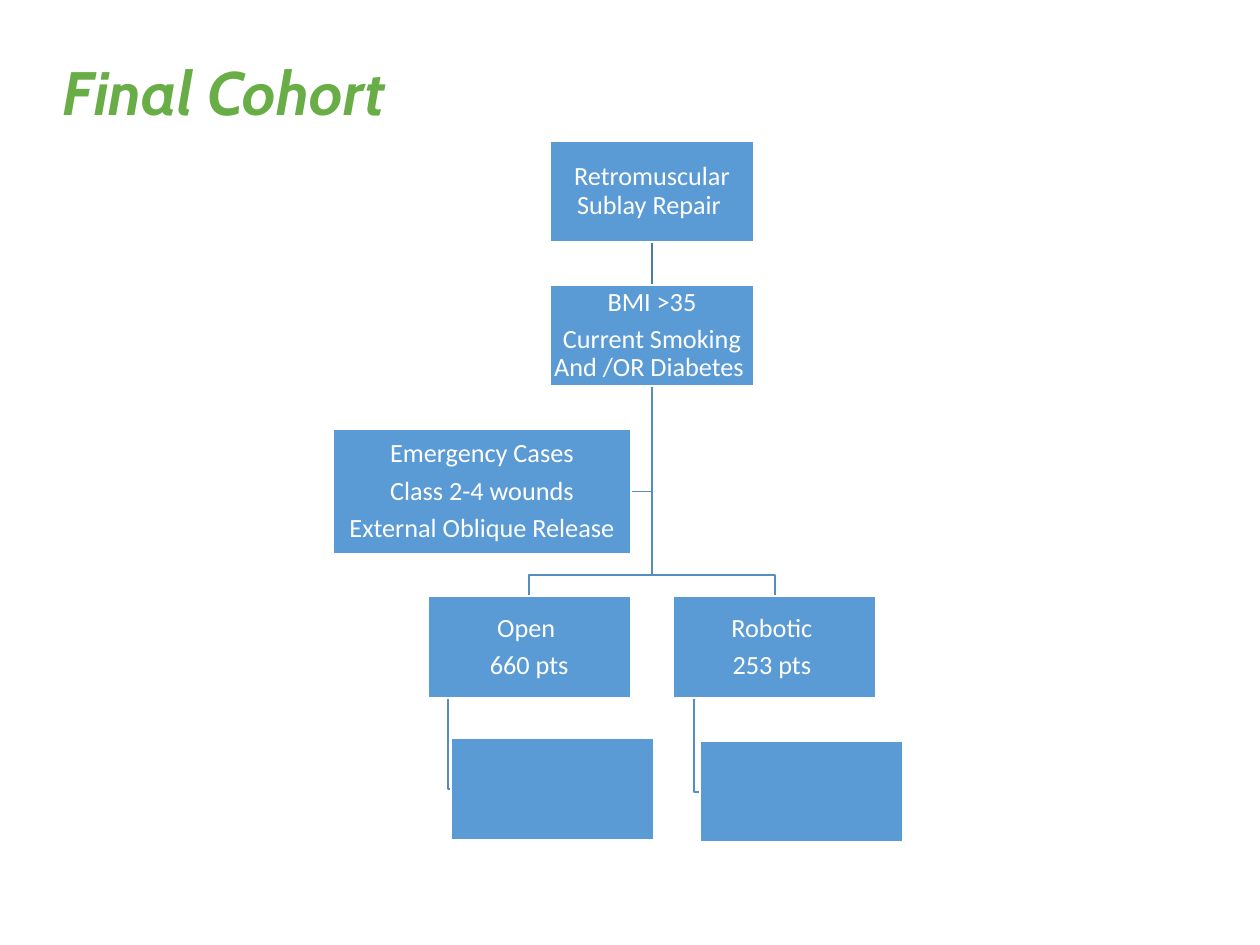
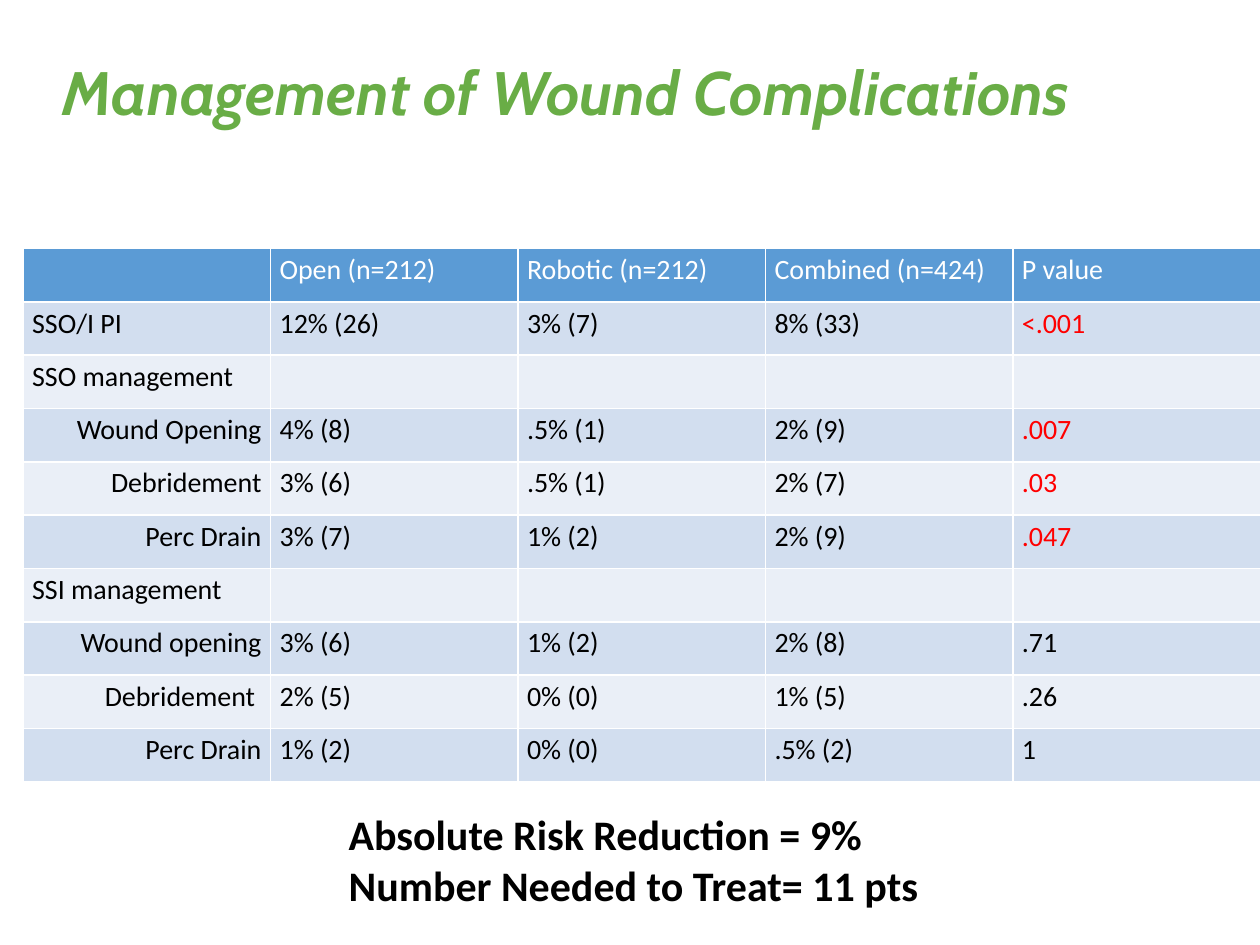
from dataclasses import dataclass

from lxml.etree import SubElement
from pptx import Presentation
from pptx.dml.color import RGBColor
from pptx.enum.shapes import MSO_CONNECTOR, MSO_SHAPE
from pptx.enum.text import MSO_ANCHOR, MSO_AUTO_SIZE, PP_ALIGN
from pptx.oxml.ns import qn
from pptx.util import Pt


@dataclass(frozen=True)
class Theme:
    title_font: str = "Cabin"
    body_font: str = "Calibri"
    title_size: float = 35
    box_size: float = 15
    cell_size: float = 16
    summary_size: float = 24
    green: str = "69AD46"
    blue: str = "5B9BD5"
    branch: str = "538DC1"
    trunk: str = "497CAB"
    band_dark: str = "D2DEEF"
    band_light: str = "EAEFF7"
    white: str = "FFFFFF"
    black: str = "000000"
    red: str = "FF0000"


T = Theme()
BOX_W, BOX_H = 116, 58

HEADER = ["", "Open (n=212)", "Robotic (n=212)", "Combined (n=424)", "P value"]
COMPLICATIONS = [
    ["SSO/I PI", "12% (26)", "3% (7)", "8% (33)", "<.001"],
    ["SSO management", "", "", "", ""],
    ["Wound Opening", "4% (8)", ".5% (1)", "2% (9)", ".007"],
    ["Debridement", "3% (6)", ".5% (1)", "2% (7)", ".03"],
    ["Perc Drain", "3% (7)", "1% (2)", "2% (9)", ".047"],
    ["SSI management", "", "", "", ""],
    ["Wound opening", "3% (6)", "1% (2)", "2% (8)", ".71"],
    ["Debridement ", "2% (5)", "0% (0)", "1% (5)", ".26"],
    ["Perc Drain", "1% (2)", "0% (0)", ".5% (2)", "1"],
]
FLUSH_LEFT = {"SSO/I PI", "SSO management", "SSI management"}
SIGNIFICANT = {"<.001", ".007", ".03", ".047"}


def rgb(color):
    return RGBColor.from_string(color)


def style_runs(p, size, color, font=T.body_font, bold=False, italic=False):
    for r in p.runs:
        r.font.name, r.font.size = font, Pt(size)
        r.font.bold, r.font.italic = bold, italic
        r.font.color.rgb = rgb(color)


def set_margins(target, x, y):
    target.margin_left = target.margin_right = Pt(x)
    target.margin_top = target.margin_bottom = Pt(y)


def add_titled_slide(prs, title):
    s = prs.slides.add_slide(prs.slide_layouts[6])
    tf = s.shapes.add_textbox(Pt(36), Pt(36), Pt(648), Pt(36)).text_frame
    tf.word_wrap = True
    set_margins(tf, 0, 0)
    p = tf.paragraphs[0]
    p.text = title
    p.line_spacing = 0.9
    style_runs(p, T.title_size, T.green, T.title_font, bold=True, italic=True)
    return s


def add_box(s, x, y, text="", w=BOX_W, h=BOX_H):
    sp = s.shapes.add_shape(MSO_SHAPE.RECTANGLE, Pt(x), Pt(y), Pt(w), Pt(h))
    sp.shadow.inherit = False
    sp.fill.solid()
    sp.fill.fore_color.rgb = rgb(T.blue)
    sp.line.color.rgb = rgb(T.white)
    sp.line.width = Pt(1)
    tf = sp.text_frame
    tf.word_wrap = True
    tf.vertical_anchor = MSO_ANCHOR.MIDDLE
    set_margins(tf, 0.75, 0.75)
    tf.text = text
    for p in tf.paragraphs:
        p.alignment = PP_ALIGN.CENTER
        p.line_spacing = 0.9
        p.space_after = Pt(5)
        style_runs(p, T.box_size, T.white)


def add_branch(s, *points):
    """Draw an open line with square bends through the points."""
    (x, y), *rest = [(Pt(px), Pt(py)) for px, py in points]
    builder = s.shapes.build_freeform(x, y)
    builder.add_line_segments(rest, close=False)
    sp = builder.convert_to_shape()
    sp.shadow.inherit = False
    sp.fill.background()
    sp.line.color.rgb = rgb(T.branch)
    sp.line.width = Pt(1)


def add_trunk(s, x, top, bottom):
    line = s.shapes.add_connector(
        MSO_CONNECTOR.STRAIGHT, Pt(x), Pt(top), Pt(x), Pt(bottom))
    line.line.color.rgb = rgb(T.trunk)
    line.line.width = Pt(1)
    SubElement(line._element.spPr, qn("a:effectLst"))


def set_borders(cell, color, width):
    tc_pr = cell._tc.get_or_add_tcPr()
    for i, side in enumerate(("lnL", "lnR", "lnT", "lnB")):
        ln = SubElement(tc_pr, qn(f"a:{side}"), w=str(Pt(width)))
        fill = SubElement(ln, qn("a:solidFill"))
        SubElement(fill, qn("a:srgbClr"), val=color)
        tc_pr.insert(i, ln)


def fill_cell(cell, text, fill, color, align):
    cell.fill.solid()
    cell.fill.fore_color.rgb = rgb(fill)
    set_margins(cell, 5.2, 2.6)
    set_borders(cell, T.white, 1)
    p = cell.text_frame.paragraphs[0]
    p.text = text
    p.alignment = align
    style_runs(p, T.cell_size, color)


def add_complications_table(s, x, y, w, h):
    rows = [HEADER] + COMPLICATIONS
    table = s.shapes.add_table(
        len(rows), len(HEADER), Pt(x), Pt(y), Pt(w), Pt(h)).table
    table.horz_banding = False
    for row in table.rows:
        row.height = Pt(h / len(rows))
    for i, values in enumerate(rows):
        fill = T.blue if i == 0 else T.band_dark if i % 2 else T.band_light
        for j, text in enumerate(values):
            color = T.white if i == 0 else T.red if text in SIGNIFICANT else T.black
            indented = i > 0 and j == 0 and text not in FLUSH_LEFT
            align = PP_ALIGN.RIGHT if indented else PP_ALIGN.LEFT
            fill_cell(table.cell(i, j), text, fill, color, align)


def add_summary(s, text):
    tf = s.shapes.add_textbox(Pt(192.2), Pt(458.6), Pt(348.5), Pt(65.5)).text_frame
    tf.word_wrap = False
    tf.auto_size = MSO_AUTO_SIZE.SHAPE_TO_FIT_TEXT
    tf.text = text
    for p in tf.paragraphs:
        style_runs(p, T.summary_size, T.black, bold=True)


def build_cohort(prs):
    s = add_titled_slide(prs, "Final Cohort")
    root_x, root_y, criteria_y = 314.6, 80.5, 162.8
    excluded_x, excluded_y, excluded_w, excluded_h = 190.4, 245.4, 170, 71
    arm_y, fork_y = 340.8, 328.4
    center = root_x + BOX_W / 2
    criteria_bottom = criteria_y + BOX_H
    excluded_mid = excluded_y + excluded_h / 2
    # (arm left, text, left and top of the box below it)
    arms = [(244.4, "Open \n660 pts", 257.8, 421.7),
            (384.8, "Robotic \n253 pts ", 400.2, 423.4)]

    add_branch(s, (center, criteria_bottom), (center, excluded_mid),
               (excluded_x + excluded_w, excluded_mid))
    for x, _, child_x, child_y in arms:
        arm_mid, stem, child_mid = x + BOX_W / 2, x + 11.6, child_y + BOX_H / 2
        add_branch(s, (center, criteria_bottom), (center, fork_y),
                   (arm_mid, fork_y), (arm_mid, arm_y))
        add_branch(s, (stem, arm_y + BOX_H), (stem, child_mid), (child_x, child_mid))
    add_trunk(s, center, root_y + BOX_H, criteria_y)

    add_box(s, root_x, root_y, "Retromuscular Sublay Repair ")
    add_box(s, root_x, criteria_y, "BMI >35\nCurrent Smoking And /OR Diabetes ")
    for x, text, child_x, child_y in arms:
        add_box(s, x, arm_y, text)
        add_box(s, child_x, child_y)
    add_box(s, excluded_x, excluded_y,
            "Emergency Cases\nClass 2-4 wounds\nExternal Oblique Release",
            excluded_w, excluded_h)


def build_complications(prs):
    s = add_titled_slide(prs, "Management of Wound Complications")
    add_complications_table(s, 13.2, 142, 707, 305)
    add_summary(s, "Absolute Risk Reduction = 9%\nNumber Needed to Treat= 11 pts")


def main():
    prs = Presentation()
    prs.slide_width, prs.slide_height = Pt(720), Pt(540)
    build_cohort(prs)
    build_complications(prs)
    prs.save("out.pptx")


if __name__ == "__main__":
    main()
